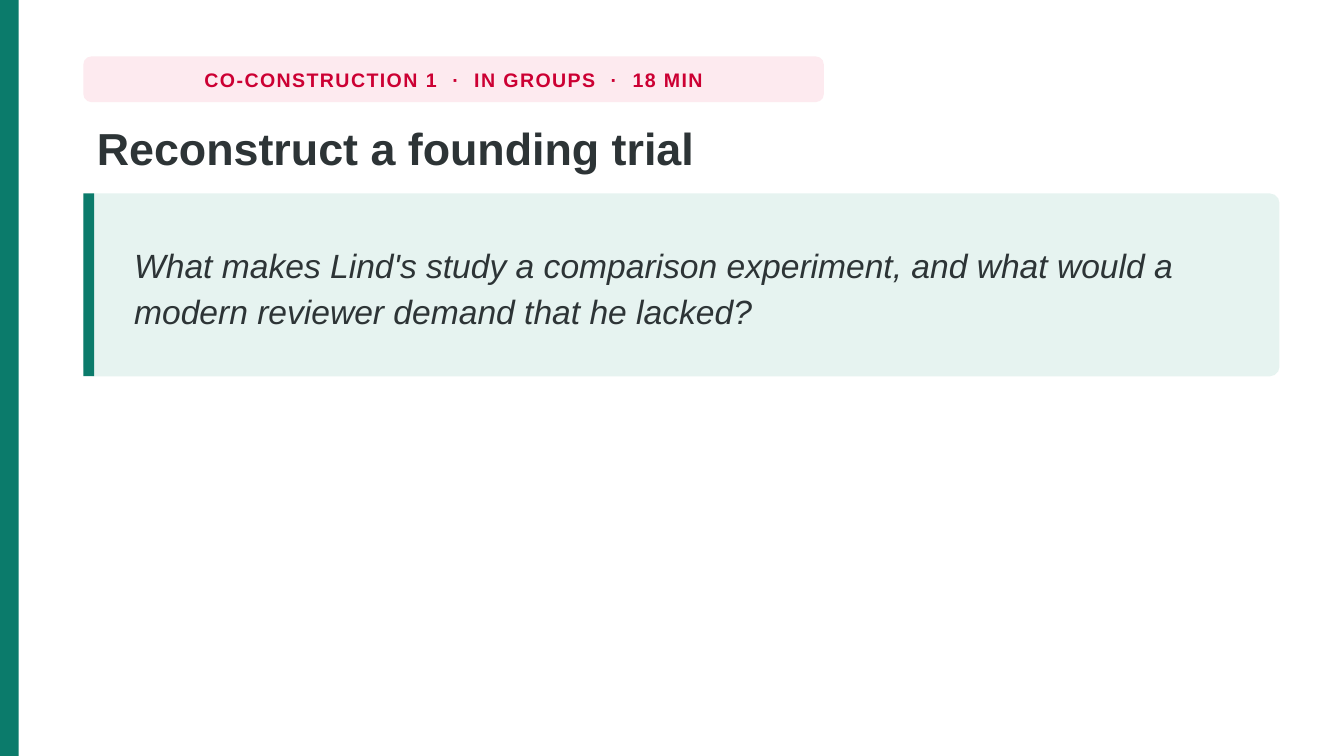
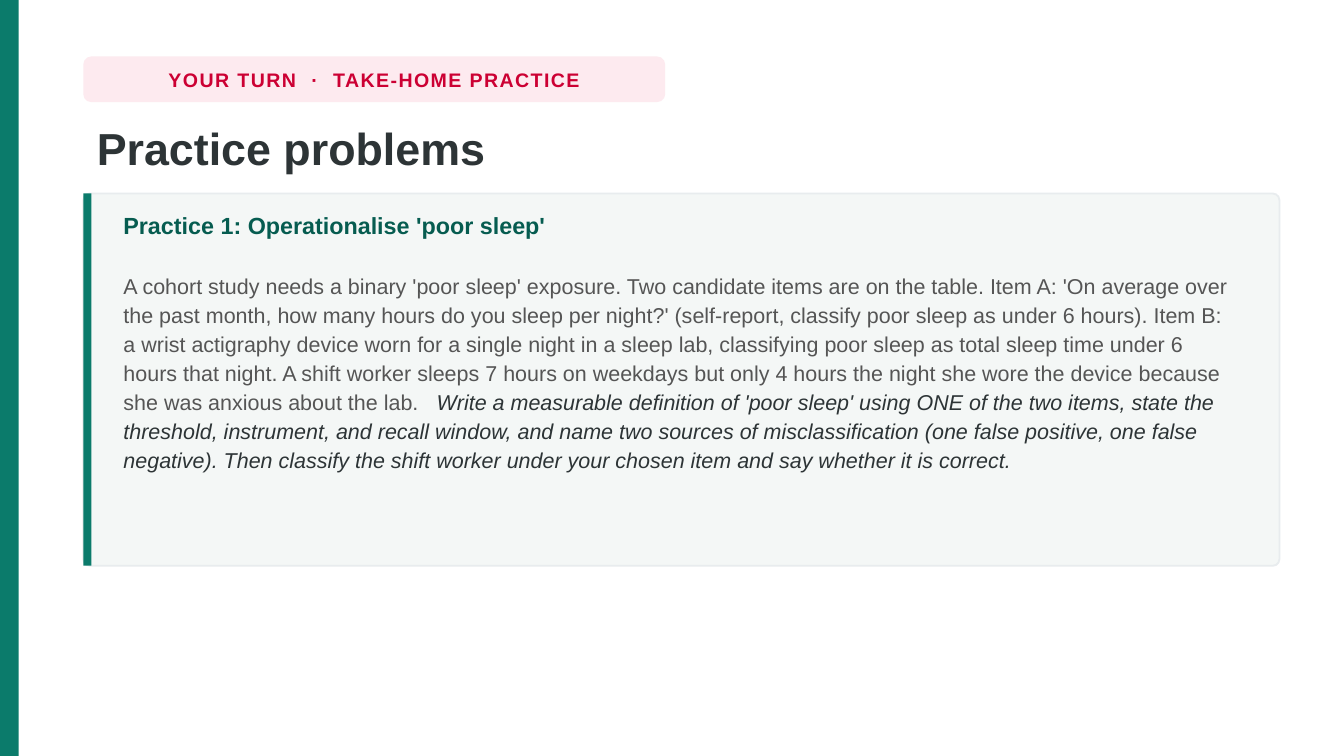
from pptx import Presentation
from pptx.dml.color import RGBColor
from pptx.enum.shapes import MSO_SHAPE
from pptx.enum.text import MSO_ANCHOR, MSO_AUTO_SIZE, PP_ALIGN
from pptx.util import Inches, Pt

RECTANGLE = MSO_SHAPE.RECTANGLE
ROUNDED = MSO_SHAPE.ROUNDED_RECTANGLE
TOP, MIDDLE = MSO_ANCHOR.TOP, MSO_ANCHOR.MIDDLE
LEFT, CENTER = PP_ALIGN.LEFT, PP_ALIGN.CENTER
FIXED_SIZE = MSO_AUTO_SIZE.NONE

FONT = "Arial"
COLORS = {
    "page": "FFFFFF",
    "accent": "0B7B6B",
    "heading": "065C50",
    "ink": "2D3436",
    "body": "555555",
    "tag": "CC0033",
    "tag_fill": "FDEAEF",
    "quote_fill": "E6F3F0",
    "card_fill": "F4F7F6",
    "card_line": "E8ECEE",
}
WIDTH = 10
HEIGHT = WIDTH * 9 / 16
MARGIN, CONTENT_WIDTH, CONTENT_TOP = 0.62, 8.9, 1.44
TITLE_ONLY = 5


def rgb(name):
    return RGBColor.from_string(COLORS[name])


def place(box):
    return [Inches(value) for value in box]


def style(font, size, color, bold=False, italic=False):
    font.name = FONT
    font.size = Pt(size)
    font.color.rgb = rgb(color)
    font.bold = bold
    font.italic = italic


def add_run(paragraph, text, spacing=0):
    run = paragraph.add_run()
    run.text = text
    if spacing:
        run.font._element.set("spc", str(round(spacing * 100)))
    return run


def add_block(slide, box, fill, radius=0, line=None):
    block = slide.shapes.add_shape(ROUNDED if radius else RECTANGLE, *place(box))
    block.shadow.inherit = False
    block.fill.solid()
    block.fill.fore_color.rgb = rgb(fill)
    if radius:
        block.adjustments[0] = radius / box[3]
    if line:
        block.line.color.rgb = rgb(line)
        block.line.width = Pt(1)
    else:
        block.line.fill.background()
    return block


def add_text_frame(slide, box, anchor):
    frame = slide.shapes.add_textbox(*place(box)).text_frame
    frame.word_wrap = True
    frame.vertical_anchor = anchor
    return frame


def add_tag(slide, box, labels):
    frame = add_block(slide, box, "tag_fill", radius=0.06).text_frame
    frame.word_wrap = False
    frame.vertical_anchor = MIDDLE
    paragraph = frame.paragraphs[0]
    paragraph.alignment = CENTER
    style(paragraph.font, 10.5, "tag", bold=True)
    for index, label in enumerate(labels):
        if index:
            add_run(paragraph, " ", 4.5)
            add_run(paragraph, "·", 0.8)
            add_run(paragraph, " ", 4.5)
        add_run(paragraph, label, 0.8)


def add_title(slide, box, text):
    title = slide.shapes.title
    title.left, title.top, title.width, title.height = place(box)
    frame = title.text_frame
    frame.text = text
    frame.auto_size = FIXED_SIZE
    frame.vertical_anchor = TOP
    paragraph = frame.paragraphs[0]
    paragraph.alignment = LEFT
    paragraph.line_spacing = 1.02
    style(paragraph.font, 24, "ink", bold=True)


def add_base_slide(prs, tag_width, labels, title):
    slide = prs.slides.add_slide(prs.slide_layouts[TITLE_ONLY])
    slide.background.fill.solid()
    slide.background.fill.fore_color.rgb = rgb("page")
    add_block(slide, (0, 0, 0.14, HEIGHT), "accent")
    add_tag(slide, (MARGIN, 0.42, tag_width, 0.34), labels)
    add_title(slide, (MARGIN, 0.84, CONTENT_WIDTH, 0.56), title)
    return slide


def add_quote(slide, box, question):
    left, top, width, height = box
    add_block(slide, box, "quote_fill", radius=0.07)
    add_block(slide, (left, top, 0.08, height), "accent")
    inner = (left + 0.28, top + 0.05, width - 0.55, height - 0.1)
    paragraph = add_text_frame(slide, inner, MIDDLE).paragraphs[0]
    paragraph.text = question
    paragraph.line_spacing = 1.16
    style(paragraph.font, 18, "ink", italic=True)


def add_practice_card(slide, box, heading, scenario, task):
    left, top, width, height = box
    add_block(slide, box, "card_fill", radius=0.05, line="card_line")
    add_block(slide, (left, top, 0.06, height), "accent")
    inner = (left + 0.2, top + 0.08, width - 0.42, height - 0.16)
    frame = add_text_frame(slide, inner, TOP)
    frame.margin_top = Inches(0.03)

    opening = frame.paragraphs[0]
    opening.text = heading
    opening.line_spacing = 1.12
    opening.space_after = Pt(16.5)
    style(opening.font, 12.5, "heading", bold=True)

    details = frame.add_paragraph()
    details.line_spacing = 1.12
    style(add_run(details, scenario).font, 11.5, "body")
    style(add_run(details, " ", 6.4).font, 11.5, "body")
    style(add_run(details, task).font, 11.5, "ink", italic=True)


def main():
    prs = Presentation()
    prs.slide_width, prs.slide_height = Inches(WIDTH), Inches(HEIGHT)

    trial = add_base_slide(
        prs, 5.51, ["CO-CONSTRUCTION 1", "IN GROUPS", "18 MIN"],
        "Reconstruct a founding trial",
    )
    add_quote(
        trial, (MARGIN, CONTENT_TOP, CONTENT_WIDTH, 1.36),
        "What makes Lind's study a comparison experiment, and what would a "
        "modern reviewer demand that he lacked?",
    )

    practice = add_base_slide(
        prs, 4.33, ["YOUR TURN", "TAKE-HOME PRACTICE"], "Practice problems",
    )
    add_practice_card(
        practice, (MARGIN, CONTENT_TOP, CONTENT_WIDTH, 2.77),
        "Practice 1: Operationalise 'poor sleep'",
        "A cohort study needs a binary 'poor sleep' exposure. Two candidate "
        "items are on the table. Item A: 'On average over the past month, how "
        "many hours do you sleep per night?' (self-report, classify poor sleep "
        "as under 6 hours). Item B: a wrist actigraphy device worn for a single "
        "night in a sleep lab, classifying poor sleep as total sleep time under "
        "6 hours that night. A shift worker sleeps 7 hours on weekdays but only "
        "4 hours the night she wore the device because she was anxious about "
        "the lab.",
        "Write a measurable definition of 'poor sleep' using ONE of the two "
        "items, state the threshold, instrument, and recall window, and name "
        "two sources of misclassification (one false positive, one false "
        "negative). Then classify the shift worker under your chosen item and "
        "say whether it is correct.",
    )
    prs.save("out.pptx")


if __name__ == "__main__":
    main()
